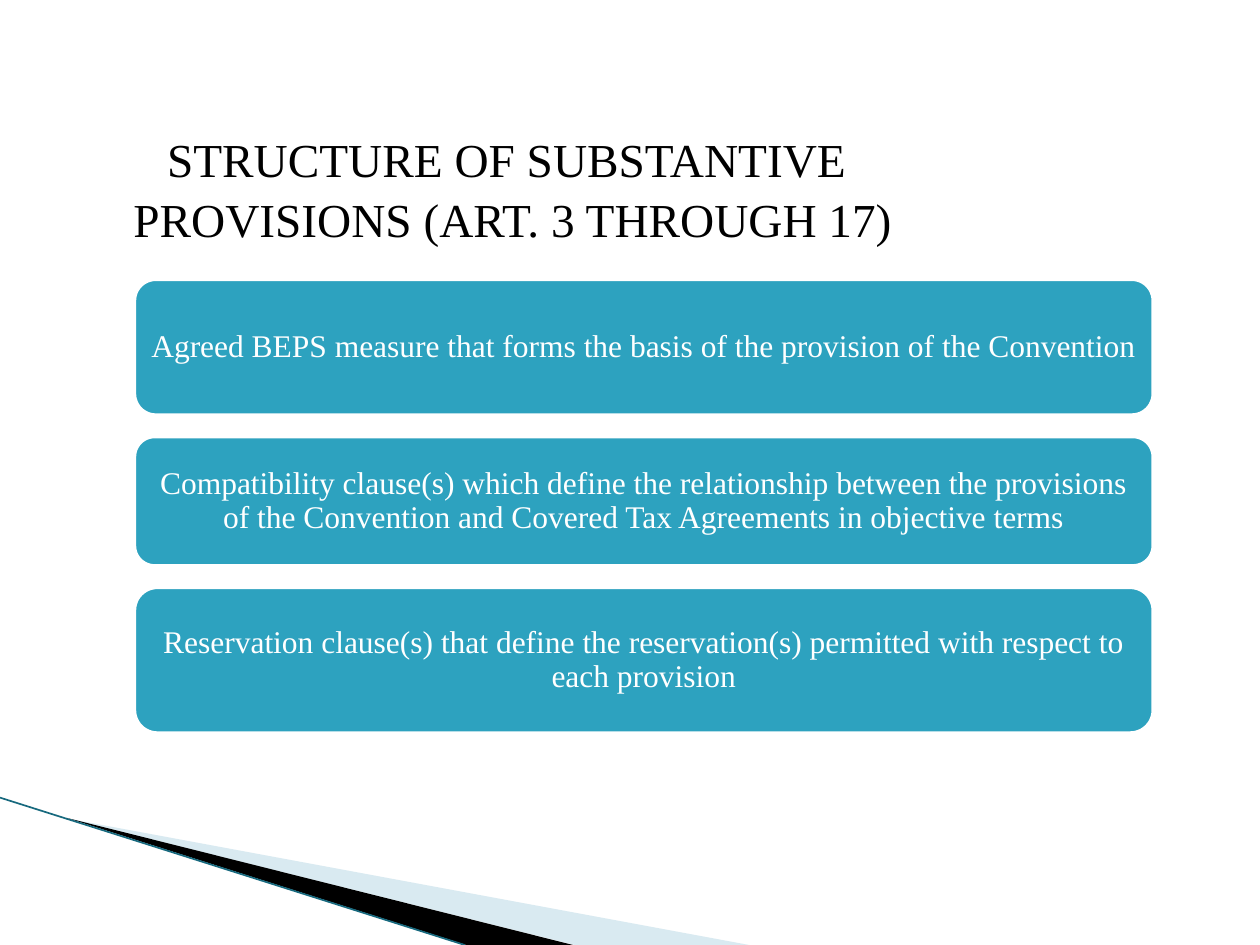
import pptx
import pptx.dml.color
import pptx.enum.shapes
import pptx.enum.text
import pptx.oxml.ns
import pptx.util
from lxml import etree

Cm = pptx.util.Cm
Pt = pptx.util.Pt
qn = pptx.oxml.ns.qn

FONT = "Times New Roman"
COLORS = {
    "box": "2DA2BF",
    "white": "FFFFFF",
    "black": "000000",
    "pale": "A0CBDC",
    "edge": "17697E",
}
TITLE = ["STRUCTURE OF SUBSTANTIVE ", "PROVISIONS (ART. 3 THROUGH 17)"]
# Text and height of each box, in cm
BOXES = [
    ("Agreed BEPS measure that forms the basis of the provision of the Convention", 2.82),
    ("Compatibility clause(s) which define the relationship between the provisions "
     "of the Convention and Covered Tax Agreements in objective terms", 2.69),
    ("Reservation clause(s) that define the reservation(s) permitted with respect to "
     "each provision", 3.02),
]
BOX_LEFT, BOX_TOP, BOX_WIDTH, BOX_GAP = 2.67, 5.59, 20.62, 0.35


def rgb(name):
    return pptx.dml.color.RGBColor.from_string(COLORS[name])


def add_run(p, text, size, color):
    p.alignment = pptx.enum.text.PP_ALIGN.CENTER
    r = p.add_run()
    r.text = text
    r.font.name = FONT
    r.font.size = Pt(size)
    r.font.color.rgb = rgb(color)


def add_wedge(s, points, color, alpha=None):
    pts = [(Cm(x), Cm(y)) for x, y in points]
    builder = s.shapes.build_freeform(*pts[0])
    builder.add_line_segments(pts[1:], close=True)
    sp = builder.convert_to_shape()
    sp.shadow.inherit = False
    sp.fill.solid()
    sp.fill.fore_color.rgb = rgb(color)
    sp.line.fill.background()
    if alpha is not None:
        clr = sp.fill._xPr.find(qn("a:solidFill"))[0]
        etree.SubElement(clr, qn("a:alpha")).set("val", str(alpha * 1000))


def add_edge(s, x1, y1, x2, y2):
    line = s.shapes.add_connector(
        pptx.enum.shapes.MSO_CONNECTOR.STRAIGHT, Cm(x1), Cm(y1), Cm(x2), Cm(y2))
    line.line.color.rgb = rgb("edge")
    line.line.width = Pt(0.95)
    etree.SubElement(line._element.spPr, qn("a:effectLst"))


def set_title(s):
    title = s.shapes.title
    title.left, title.top, title.width, title.height = Cm(0.5), Cm(2.44), Cm(19.66), Cm(2.57)
    tf = title.text_frame
    tf.word_wrap = True
    tf.auto_size = pptx.enum.text.MSO_AUTO_SIZE.NONE
    tf.vertical_anchor = pptx.enum.text.MSO_ANCHOR.TOP
    for i, text in enumerate(TITLE):
        p = tf.add_paragraph() if i else tf.paragraphs[0]
        p.line_spacing = 1.05
        p.space_before = Pt(0)
        add_run(p, text, 27, "black")


def add_box(s, top, height, text):
    sp = s.shapes.add_shape(
        pptx.enum.shapes.MSO_SHAPE.ROUNDED_RECTANGLE,
        Cm(BOX_LEFT), Cm(top), Cm(BOX_WIDTH), Cm(height))
    sp.shadow.inherit = False
    sp.fill.solid()
    sp.fill.fore_color.rgb = rgb("box")
    sp.line.color.rgb = rgb("white")
    sp.line.width = Pt(4.33)
    tf = sp.text_frame
    tf.word_wrap = True
    tf.vertical_anchor = pptx.enum.text.MSO_ANCHOR.MIDDLE
    tf.margin_left = tf.margin_right = Cm(0.1)
    tf.margin_top = tf.margin_bottom = Cm(0.05)
    p = tf.paragraphs[0]
    p.line_spacing = 0.9
    add_run(p, text, 18, "white")


def main():
    prs = pptx.Presentation()
    prs.slide_width, prs.slide_height = Cm(25.4), Cm(19.05)
    s = prs.slides.add_slide(prs.slide_layouts[5])

    # Corner decoration
    add_wedge(s, [(1.4, 16.51), (15.1, 19.05), (11.58, 19.05)], "pale", alpha=40)
    add_wedge(s, [(1.35, 16.49), (11.55, 19.05), (9.4, 19.05)], "black")
    add_edge(s, 0, 16.08, 9.37, 19.05)

    set_title(s)

    # Stacked boxes
    top = BOX_TOP
    for text, height in BOXES:
        add_box(s, top, height, text)
        top += height + BOX_GAP

    prs.save("out.pptx")


if __name__ == "__main__":
    main()
